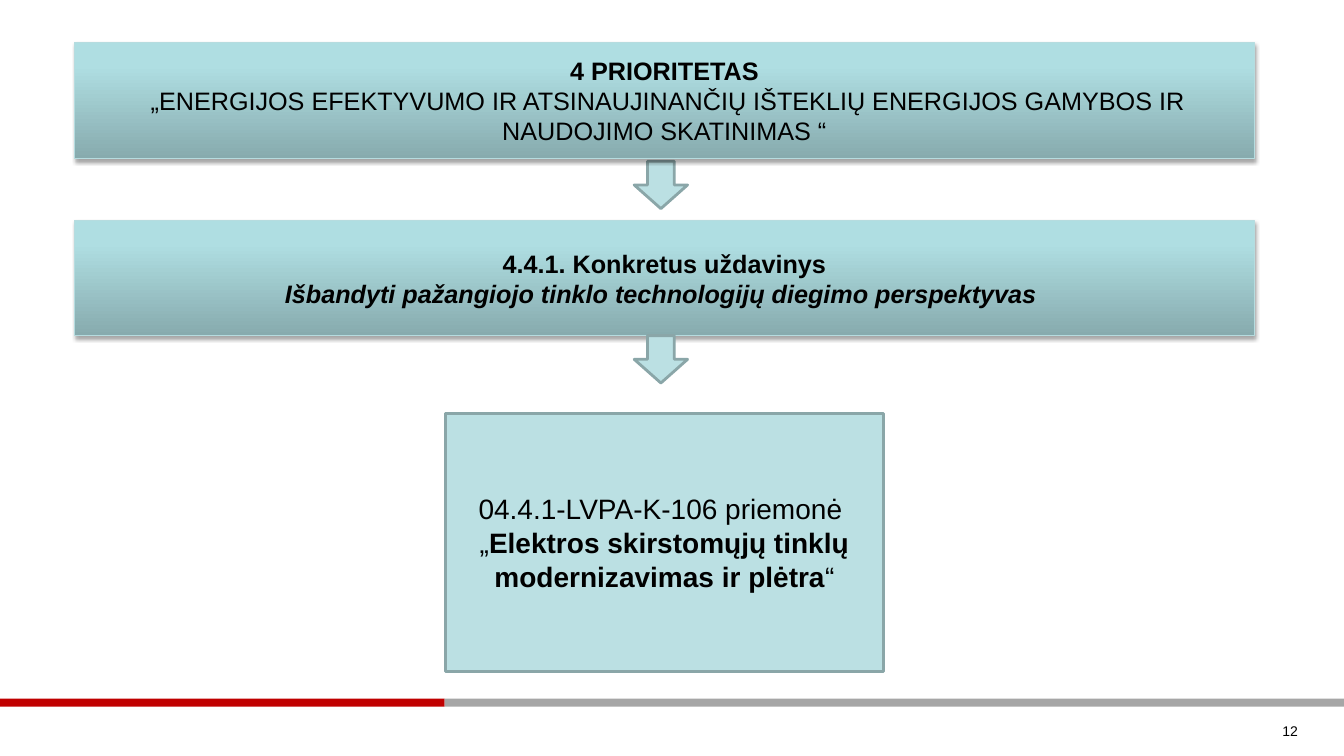
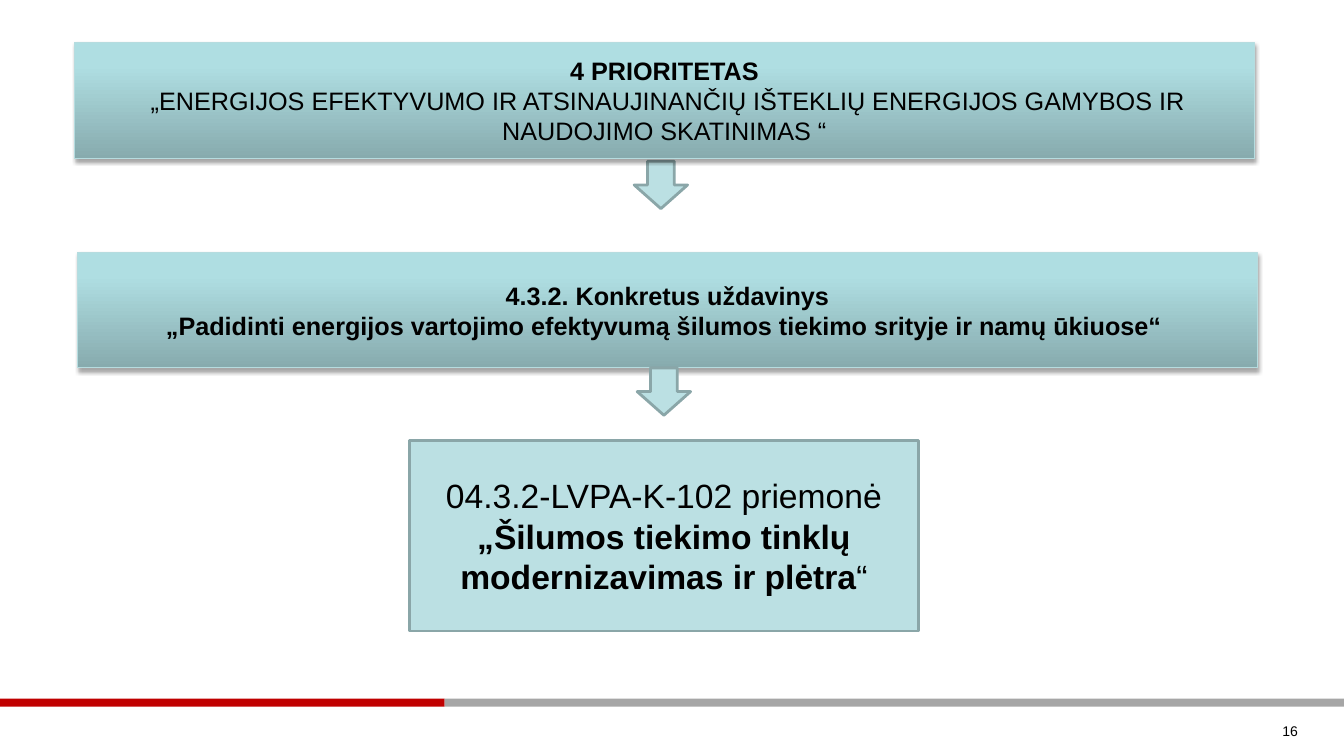
import copy
from dataclasses import dataclass

import pptx
import pptx.dml.color
import pptx.enum.shapes
import pptx.enum.text
import pptx.oxml
import pptx.oxml.ns
import pptx.util

RGBColor = pptx.dml.color.RGBColor
MSO_SHAPE = pptx.enum.shapes.MSO_SHAPE
PP_ALIGN = pptx.enum.text.PP_ALIGN
Pt = pptx.util.Pt

EMU_PER_PX = 9144  # 100 px to the inch
SLIDE_WIDTH, SLIDE_HEIGHT = 1333, 750
FONT = "Arial"

BLACK = RGBColor(0x00, 0x00, 0x00)
RED = RGBColor(0xC0, 0x00, 0x00)
GREY = RGBColor(0xA6, 0xA6, 0xA6)
AQUA = RGBColor(0xBB, 0xE0, 0xE3)
AQUA_OUTLINE = RGBColor(0x8A, 0xA6, 0xA8)
BAND_OUTLINE = RGBColor(0xB6, 0xDC, 0xDF)
BAND_GRADIENT = (
    (0.0, RGBColor(0x87, 0xAB, 0xAE)),
    (0.8, RGBColor(0xAF, 0xDE, 0xE2)),
    (1.0, RGBColor(0xAF, 0xE0, 0xE4)),
)
BAND_SHADOW = (
    f'<a:outerShdw {pptx.oxml.ns.nsdecls("a")} blurRad="{Pt(3.1)}" dist="{Pt(1.8)}" '
    'dir="5400000" rotWithShape="0">'
    '<a:srgbClr val="000000"><a:alpha val="35000"/></a:srgbClr></a:outerShdw>'
)


@dataclass(frozen=True)
class Box:
    left: int
    top: int
    width: int
    height: int

    def emu(self) -> list[int]:
        return [n * EMU_PER_PX for n in (self.left, self.top, self.width, self.height)]


@dataclass(frozen=True)
class Words:
    text: str
    bold: bool = False
    italic: bool = False


Paragraphs = list[list[Words]]


@dataclass(frozen=True)
class PrioritySlide:
    number: int
    objective_box: Box
    objective: Paragraphs
    measure_box: Box
    measure: Paragraphs
    measure_size: int


BAND_WIDTH = 1170
PRIORITY_BOX = Box(74, 42, BAND_WIDTH, 115)
PRIORITY = [
    [Words("4 PRIORITETAS", bold=True)],
    [Words(" „ENERGIJOS EFEKTYVUMO IR ATSINAUJINANČIŲ IŠTEKLIŲ ENERGIJOS "
           "GAMYBOS IR NAUDOJIMO SKATINIMAS “")],
]
PRIORITY_ARROW_TOP = 160
ARROW_INDENT = 555  # from the left edge of the band above

SLIDES = [
    PrioritySlide(
        number=12,
        objective_box=Box(74, 219, BAND_WIDTH, 114),
        objective=[
            [Words("4.4.1. Konkretus uždavinys", bold=True)],
            [Words("Išbandyti pažangiojo tinklo technologijų diegimo perspektyvas ",
                   bold=True, italic=True)],
        ],
        measure_box=Box(442, 410, 434, 256),
        measure=[
            [Words("04.4.1-LVPA-K-106 priemonė ")],
            [Words("„"),
             Words("Elektros skirstomųjų tinklų modernizavimas ir plėtra", bold=True),
             Words("“")],
        ],
        measure_size=20,
    ),
    PrioritySlide(
        number=16,
        objective_box=Box(77, 251, BAND_WIDTH, 114),
        objective=[
            [Words("4.3.2. Konkretus uždavinys", bold=True)],
            [Words("„Padidinti energijos vartojimo efektyvumą šilumos tiekimo "
                   "srityje ir namų ūkiuose“ ", bold=True)],
        ],
        measure_box=Box(406, 437, 505, 189),
        measure=[
            [Words("04.3.2-LVPA-K-102 priemonė "),
             Words("„Šilumos tiekimo tinklų modernizavimas ir plėtra", bold=True),
             Words("“")],
        ],
        measure_size=24,
    ),
]


def write(shape, paragraphs: Paragraphs, size: int, align=PP_ALIGN.CENTER) -> None:
    frame = shape.text_frame
    frame.word_wrap = True
    frame.vertical_anchor = pptx.enum.text.MSO_ANCHOR.MIDDLE
    for index, pieces in enumerate(paragraphs):
        paragraph = frame.add_paragraph() if index else frame.paragraphs[0]
        paragraph.alignment = align
        for words in pieces:
            run = paragraph.add_run()
            run.text = words.text
            run.font.name = FONT
            run.font.size = Pt(size)
            run.font.bold = words.bold
            run.font.italic = words.italic
            run.font.color.rgb = BLACK


def add_flat(slide, box: Box, fill: RGBColor, outline: RGBColor | None = None,
             kind=MSO_SHAPE.RECTANGLE):
    """Add a shape with a plain fill and, if a colour is given, a 2 pt outline."""
    shape = slide.shapes.add_shape(kind, *box.emu())
    shape.shadow.inherit = False
    shape.fill.solid()
    shape.fill.fore_color.rgb = fill
    if outline is None:
        shape.line.fill.background()
    else:
        shape.line.color.rgb = outline
        shape.line.width = Pt(2)
    return shape


def add_band(slide, box: Box, paragraphs: Paragraphs) -> None:
    """Add a wide gradient bar with a soft shadow and centred text."""
    band = slide.shapes.add_shape(MSO_SHAPE.RECTANGLE, *box.emu())
    band.shadow.inherit = False
    properties = band._element.spPr
    effects = properties.find(pptx.oxml.ns.qn("a:effectLst"))
    effects.append(pptx.oxml.parse_xml(BAND_SHADOW))

    band.fill.gradient()
    band.fill.gradient_angle = 90
    stop_list = properties.find(".//" + pptx.oxml.ns.qn("a:gsLst"))
    stop_list.append(copy.deepcopy(stop_list[-1]))
    for stop, (position, colour) in zip(band.fill.gradient_stops, BAND_GRADIENT):
        stop.position = position
        stop.color.rgb = colour

    band.line.color.rgb = BAND_OUTLINE
    band.line.width = Pt(0.75)
    write(band, paragraphs, 18)


def add_arrow_below(slide, band: Box, top: int) -> None:
    box = Box(band.left + ARROW_INDENT, top, 53, 47)
    add_flat(slide, box, AQUA, AQUA_OUTLINE, MSO_SHAPE.DOWN_ARROW)


def add_footer(slide, number: int) -> None:
    red_width = 441
    add_flat(slide, Box(0, 693, red_width, 8), RED)
    add_flat(slide, Box(red_width, 693, SLIDE_WIDTH - red_width, 8), GREY)
    page_number = slide.shapes.add_textbox(*Box(986, 701, 311, 49).emu())
    write(page_number, [[Words(str(number))]], 10, PP_ALIGN.RIGHT)


def add_priority_slide(deck, content: PrioritySlide) -> None:
    slide = deck.slides.add_slide(deck.slide_layouts[6])
    objective_box = content.objective_box
    add_footer(slide, content.number)
    add_band(slide, objective_box, content.objective)
    add_arrow_below(slide, PRIORITY_BOX, PRIORITY_ARROW_TOP)
    add_band(slide, PRIORITY_BOX, PRIORITY)
    add_arrow_below(slide, objective_box, objective_box.top + objective_box.height)
    measure = add_flat(slide, content.measure_box, AQUA, AQUA_OUTLINE)
    write(measure, content.measure, content.measure_size)


def main() -> None:
    deck = pptx.Presentation()
    deck.slide_width = SLIDE_WIDTH * EMU_PER_PX
    deck.slide_height = SLIDE_HEIGHT * EMU_PER_PX
    for content in SLIDES:
        add_priority_slide(deck, content)
    deck.save("out.pptx")


if __name__ == "__main__":
    main()
